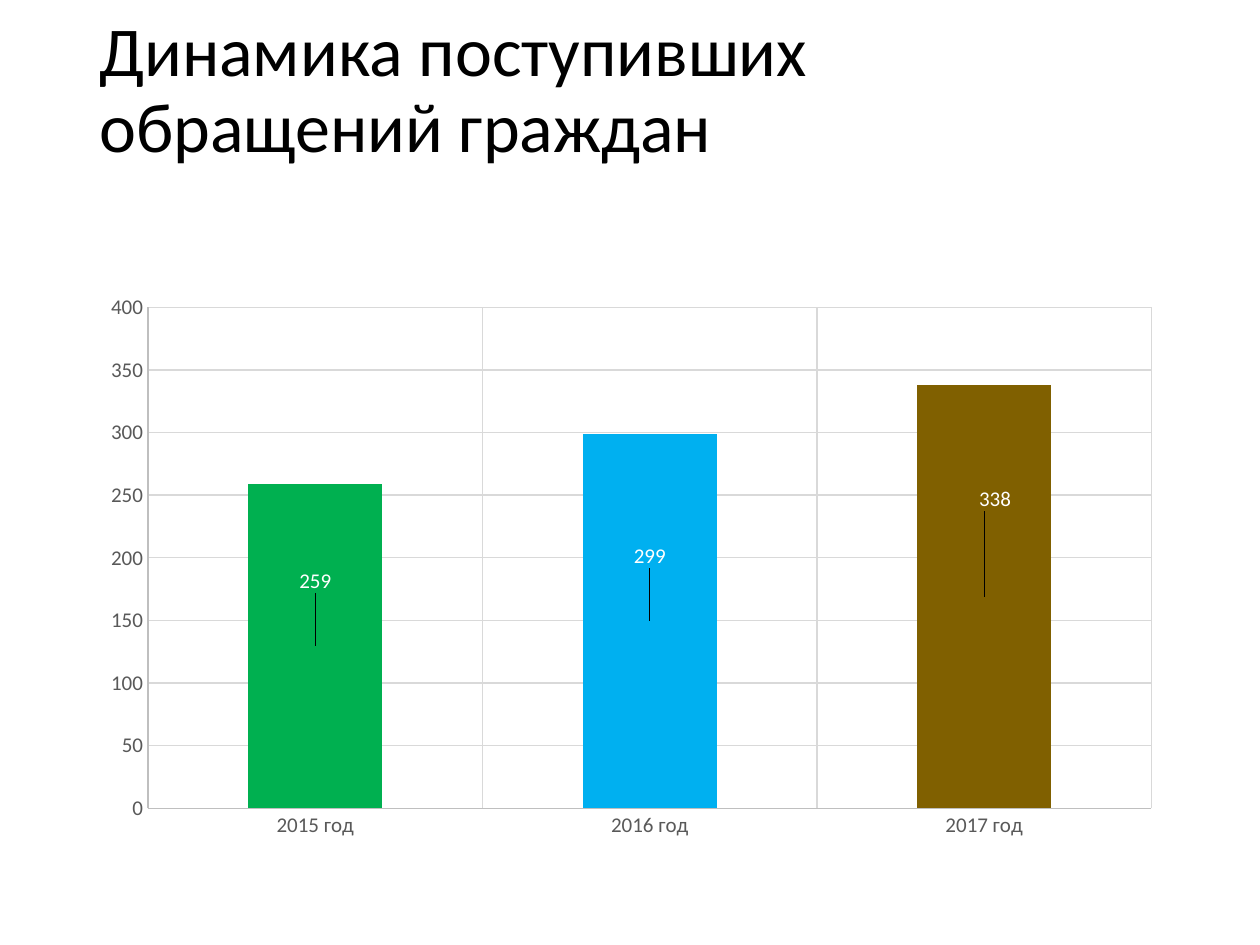
import pptx
import pptx.util
import pptx.dml.color
import pptx.chart.data
import pptx.enum.chart
import pptx.enum.text
import pptx.oxml
import pptx.oxml.ns

Inches = pptx.util.Inches
Pt = pptx.util.Pt
FACE = "Calibri"
YEARS = [
    ("2015 год", 259, "00B050", (0, -0.1)),
    ("2016 год", 299, "00B0F0", (0, -0.1)),
    ("2017 год", 338, "806000", (0.01, -0.15)),
]


def color(code):
    """Turn a hex string into a colour."""
    return pptx.dml.color.RGBColor.from_string(code)


def apply(item, values):
    """Set each named value on the item."""
    for name, value in values.items():
        setattr(item, name, value)


def style(font, size, code):
    """Give a font its face, size and colour."""
    apply(font, {"name": FACE, "size": Pt(size), "bold": False})
    font.color.rgb = color(code)


def stroke(line, code):
    """Give a line its colour and a thin width."""
    line.color.rgb = color(code)
    line.width = Pt(0.75)


def layout(parts):
    """Build a manual chart layout from its named parts."""
    body = "".join(f'<c:{name} val="{value}"/>' for name, value in parts.items())
    space = pptx.oxml.ns.nsdecls("c")
    return pptx.oxml.parse_xml(
        f"<c:layout {space}><c:manualLayout>{body}</c:manualLayout></c:layout>"
    )


def heading(slide, box):
    """Write the slide heading in the box."""
    frame = slide.shapes.add_textbox(*box).text_frame
    apply(frame, {
        "word_wrap": True,
        "vertical_anchor": pptx.enum.text.MSO_ANCHOR.MIDDLE,
        "margin_right": Inches(0.3),
    })
    para = frame.paragraphs[0]
    para.line_spacing = 0.9
    run = para.add_run()
    run.text = "Динамика поступивших обращений граждан"
    style(run.font, 40, "000000")


def axes(chart):
    """Format both axes and their grids."""
    kinds = pptx.enum.chart.XL_TICK_MARK
    for axis in (chart.category_axis, chart.value_axis):
        apply(axis, {
            "has_major_gridlines": True,
            "major_tick_mark": kinds.NONE,
            "minor_tick_mark": kinds.NONE,
        })
        style(axis.tick_labels.font, 12, "595959")
        stroke(axis.format.line, "BFBFBF")
        stroke(axis.major_gridlines.format.line, "D9D9D9")
    apply(chart.value_axis, {
        "minimum_scale": 0, "maximum_scale": 400, "major_unit": 50,
    })


def bars(plot):
    """Colour each bar and place its label."""
    apply(plot, {"gap_width": 150, "vary_by_categories": False,
                 "has_data_labels": True})
    apply(plot.data_labels, {"show_value": True})
    style(plot.data_labels.font, 12, "FFFFFF")
    series = plot.series[0]
    series.format.fill.solid()
    series.format.fill.fore_color.rgb = color("5B9BD5")
    for index, (_, _, code, (left, top)) in enumerate(YEARS):
        point = series.points[index]
        point.format.fill.solid()
        point.format.fill.fore_color.rgb = color(code)
        label = point.data_label
        style(label.font, 12, "FFFFFF")
        label.position = pptx.enum.chart.XL_LABEL_POSITION.CENTER
    tag = pptx.oxml.ns.qn("c:dLbl")
    for node, year in zip(series._element.iter(tag), YEARS):
        left, top = year[3]
        node.insert(1, layout({"x": left, "y": top}))


def graph(slide, box):
    """Draw the column chart of yearly requests in the box."""
    data = pptx.chart.data.CategoryChartData()
    data.categories = [year[0] for year in YEARS]
    data.add_series(" ", [year[1] for year in YEARS])
    kind = pptx.enum.chart.XL_CHART_TYPE.COLUMN_CLUSTERED
    chart = slide.shapes.add_chart(kind, *box, data).chart
    apply(chart, {"has_title": False, "has_legend": False})
    style(chart.font, 10, "000000")
    axes(chart)
    bars(chart.plots[0])
    area = chart._chartSpace.chart.plotArea
    for old in area.findall(pptx.oxml.ns.qn("c:layout")):
        area.remove(old)
    area.insert(0, layout({
        "layoutTarget": "inner", "xMode": "edge", "yMode": "edge",
        "x": 0.054, "y": 0.163, "w": 0.925, "h": 0.772,
    }))


def main():
    """Build and save the slide."""
    deck = pptx.Presentation()
    apply(deck, {"slide_width": Inches(10), "slide_height": Inches(7.5)})
    slide = deck.slides.add_slide(deck.slide_layouts[6])
    heading(slide, [Inches(n) for n in (0.69, 0, 8.62, 1.46)])
    graph(slide, [Inches(n) for n in (0.71, 1.6, 8.61, 5.15)])
    deck.save("out.pptx")


if __name__ == "__main__":
    main()
